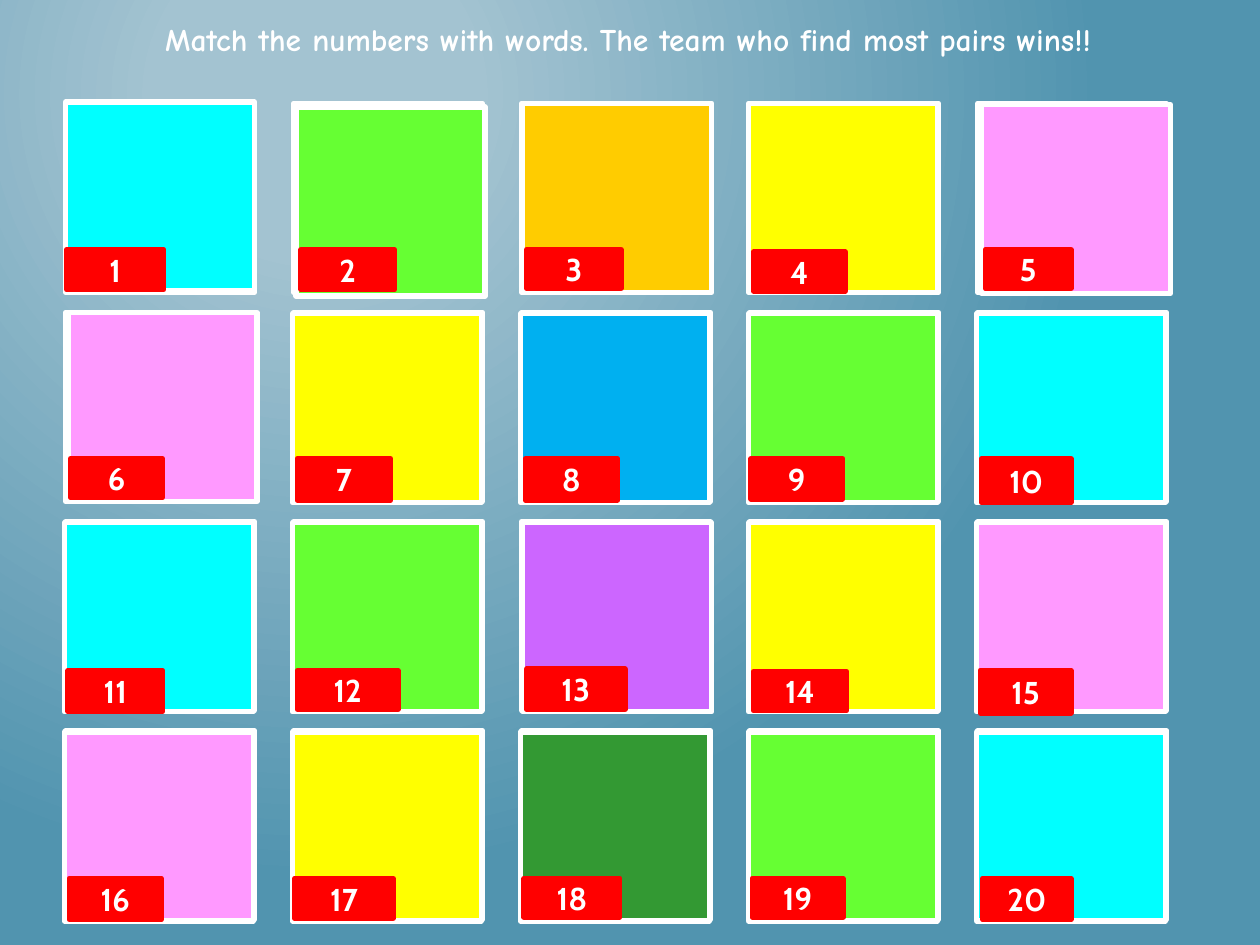
from lxml import etree
from pptx import Presentation
from pptx.dml.color import RGBColor
from pptx.enum.shapes import MSO_SHAPE
from pptx.enum.text import MSO_ANCHOR, MSO_AUTO_SIZE, PP_ALIGN
from pptx.oxml.ns import qn
from pptx.util import Inches, Pt

RECT = MSO_SHAPE.RECTANGLE
CENTER = PP_ALIGN.CENTER
TOP, MIDDLE = MSO_ANCHOR.TOP, MSO_ANCHOR.MIDDLE
TITLE_ONLY = 5

WHITE, RED = "FFFFFF", "FF0000"
CYAN, GREEN, YELLOW, PINK = "00FFFF", "66FF33", "FFFF00", "FF99FF"
ORANGE, BLUE, PURPLE, FOREST = "FFCC00", "00B0F0", "CC66FF", "339933"

# Card grid
COLUMNS = 5
LEFT, TOP_EDGE = 0.52, 0.82
PITCH_X, PITCH_Y = 1.81, 1.66
CARD = 1.5
COLOURS = [
    CYAN, GREEN, ORANGE, YELLOW, PINK,
    PINK, YELLOW, BLUE, GREEN, CYAN,
    CYAN, GREEN, PURPLE, YELLOW, PINK,
    PINK, YELLOW, FOREST, GREEN, CYAN,
]

# Offset of each front card from its back card, where it is not the usual one
USUAL_SHIFT = (-0.01, 0.01)
SHIFTS = {1: (0, -0.01), 2: (0.02, 0.03), 3: (0.01, 0), 4: (-0.01, 0),
          5: (0.03, 0.01), 6: (0.02, 0), 13: (0.01, 0.01)}

# Number tags: left, top, width, height
TAGS = [
    (0.53, 1.98, 0.77, 0.32), (2.39, 1.98, 0.74, 0.32), (4.18, 1.98, 0.75, 0.31),
    (5.98, 2.00, 0.73, 0.31), (7.82, 1.98, 0.68, 0.31),
    (0.56, 3.64, 0.73, 0.31), (2.36, 3.64, 0.74, 0.33), (4.17, 3.64, 0.73, 0.33),
    (5.96, 3.64, 0.73, 0.32), (7.79, 3.64, 0.71, 0.35),
    (0.54, 5.32, 0.75, 0.33), (2.36, 5.32, 0.80, 0.31), (4.18, 5.31, 0.78, 0.32),
    (5.98, 5.33, 0.74, 0.31), (7.78, 5.32, 0.72, 0.34),
    (0.55, 6.97, 0.73, 0.33), (2.34, 6.97, 0.78, 0.32), (4.16, 6.97, 0.76, 0.31),
    (5.97, 6.97, 0.72, 0.31), (7.80, 6.97, 0.70, 0.33),
]


def rgb(value):
    return RGBColor.from_string(value)


def set_background(s):
    fill = s.background.fill
    fill.gradient()
    stops = ((0.2, "A3C3D1"), (1, "5194AF"))
    for stop, (position, colour) in zip(fill.gradient_stops, stops):
        stop.position = position
        stop.color.rgb = rgb(colour)
    # Radial instead of linear
    grad = s.element.find(".//" + qn("a:gradFill"))
    grad.remove(grad.find(qn("a:lin")))
    path = etree.SubElement(grad, qn("a:path"), path="circle")
    etree.SubElement(path, qn("a:fillToRect"),
                     l="50000", t="20000", r="100000", b="100000")


def write(shape, text, font, anchor):
    tf = shape.text_frame
    tf.text = text
    tf.word_wrap = True
    tf.vertical_anchor = anchor
    p = tf.paragraphs[0]
    p.alignment = CENTER
    r = p.runs[0]
    r.font.name = font
    r.font.size = Pt(18)
    r.font.bold = True
    r.font.color.rgb = rgb(WHITE)


def add_title(s, text):
    title = s.shapes.title
    title.left, title.top = Inches(0.69), Inches(0.11)
    title.width, title.height = Inches(8.59), Inches(0.4)
    write(title, text, "Comic Neue", TOP)
    title.text_frame.auto_size = MSO_AUTO_SIZE.SHAPE_TO_FIT_TEXT


def add_box(s, x, y, w, h, line, fill=None):
    box = s.shapes.add_shape(RECT, Inches(x), Inches(y), Inches(w), Inches(h))
    box.shadow.inherit = False
    if fill:
        box.fill.solid()
        box.fill.fore_color.rgb = rgb(fill)
    else:
        box.fill.background()
    box.line.color.rgb = rgb(line)
    box.line.width = Pt(3)
    return box


def add_card(s, number, colour):
    row, column = divmod(number - 1, COLUMNS)
    x, y = LEFT + column * PITCH_X, TOP_EDGE + row * PITCH_Y
    dx, dy = SHIFTS.get(number, USUAL_SHIFT)
    add_box(s, x, y, CARD, CARD, WHITE)
    add_box(s, x + dx, y + dy, CARD, CARD, WHITE, colour)


def add_tag(s, number, place):
    tag = add_box(s, *place, RED, RED)
    write(tag, str(number), "Cabin", MIDDLE)


def main():
    prs = Presentation()
    prs.slide_width, prs.slide_height = Inches(10), Inches(7.5)
    s = prs.slides.add_slide(prs.slide_layouts[TITLE_ONLY])
    set_background(s)
    add_title(s, "Match the numbers with words. The team who find most pairs wins!!")
    for number, (colour, place) in enumerate(zip(COLOURS, TAGS), 1):
        add_card(s, number, colour)
        add_tag(s, number, place)
    prs.save("out.pptx")


if __name__ == "__main__":
    main()
